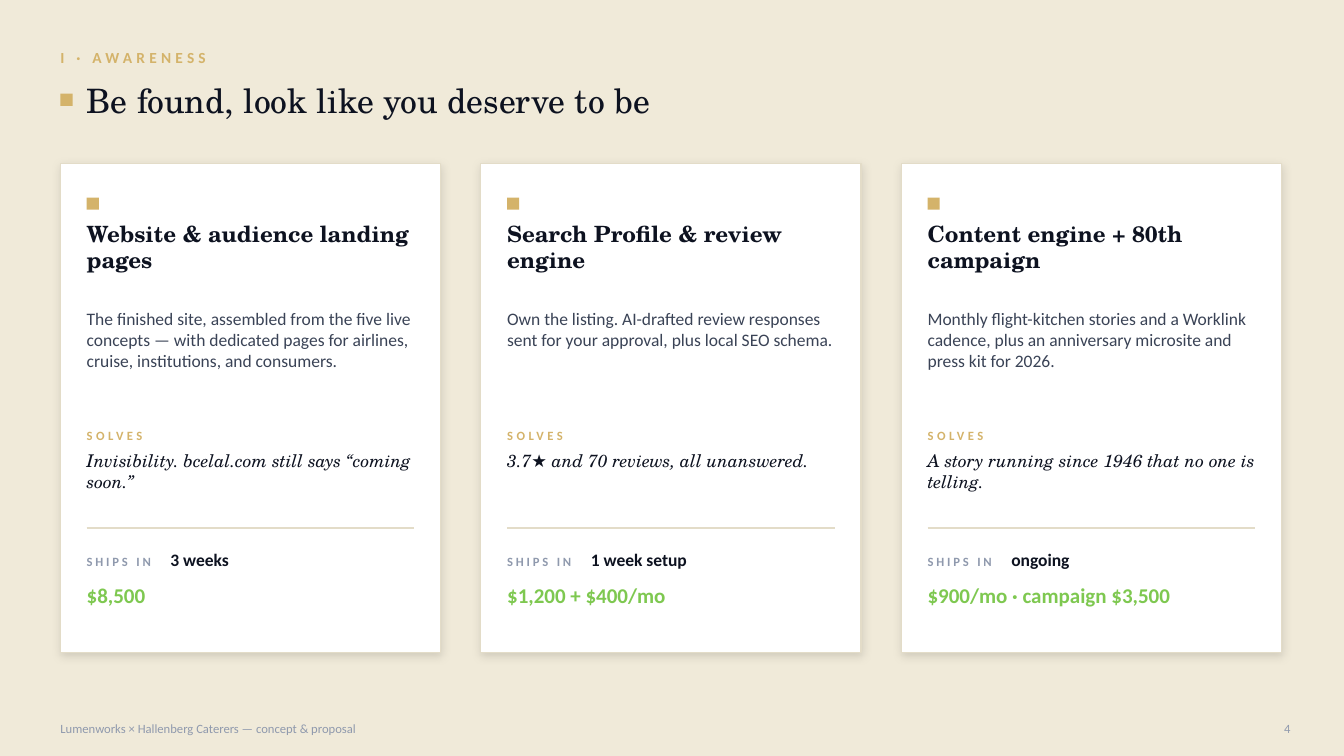
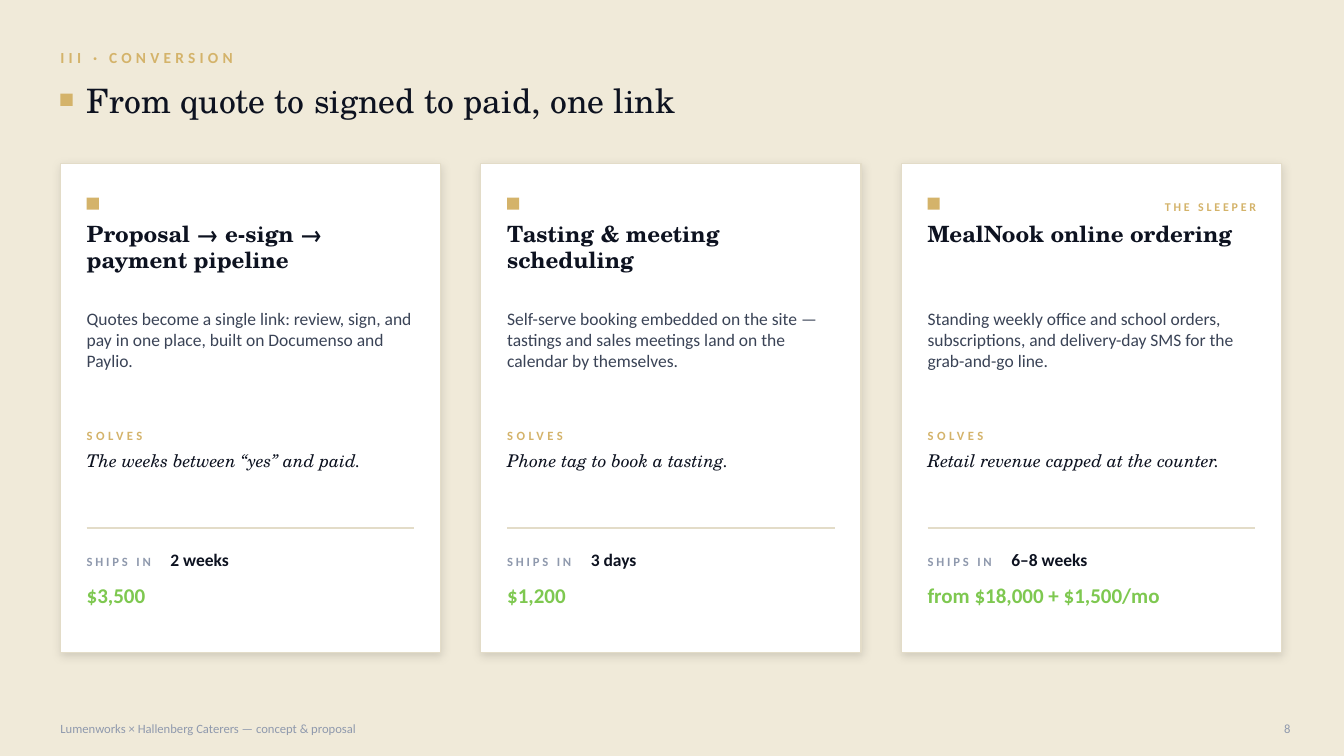
from dataclasses import dataclass

from lxml import etree
from pptx import Presentation
from pptx.dml.color import RGBColor
from pptx.enum.shapes import MSO_CONNECTOR, MSO_SHAPE
from pptx.enum.text import MSO_ANCHOR, PP_ALIGN
from pptx.oxml.ns import qn
from pptx.slide import Slide
from pptx.util import Inches, Pt

RECT = MSO_SHAPE.RECTANGLE
STRAIGHT = MSO_CONNECTOR.STRAIGHT
TOP, MIDDLE = MSO_ANCHOR.TOP, MSO_ANCHOR.MIDDLE
LEFT, RIGHT = PP_ALIGN.LEFT, PP_ALIGN.RIGHT

CREAM, WHITE, GOLD, SAND = "F0EAD9", "FFFFFF", "D4B36A", "E3DCC8"
INK, SLATE, MUTED, GREEN = "0D1220", "3A4356", "8F99AD", "7EC850"
SANS, SERIF = "Calibri", "TeX Gyre Schola"

MARGIN = 0.6
CARD_TOP, CARD_W, CARD_H, CARD_GAP = 1.62, 3.77, 4.85, 0.4
PAD = 0.26
INNER_W = CARD_W - 2 * PAD
MARKER = 0.12
FOOTER = "Lumenworks × Hallenberg Caterers — concept & proposal"


@dataclass(frozen=True)
class Offer:
    title: str
    body: str
    solves: str
    ships_in: str
    price: str
    tag: str = ""


@dataclass(frozen=True)
class Page:
    number: int
    kicker: str
    title: str
    offers: tuple[Offer, ...]


PAGES = (
    Page(4, "I · AWARENESS", "Be found, look like you deserve to be", (
        Offer("Website & audience landing pages",
              "The finished site, assembled from the five live concepts — with "
              "dedicated pages for airlines, cruise, institutions, and consumers.",
              "Invisibility. bcelal.com still says “coming soon.”",
              "3 weeks", "$8,500"),
        Offer("Search Profile & review engine",
              "Own the listing. AI-drafted review responses sent for your "
              "approval, plus local SEO schema.",
              "3.7★ and 70 reviews, all unanswered.",
              "1 week setup", "$1,200 + $400/mo"),
        Offer("Content engine + 80th campaign",
              "Monthly flight-kitchen stories and a Worklink cadence, plus an "
              "anniversary microsite and press kit for 2026.",
              "A story running since 1946 that no one is telling.",
              "ongoing", "$900/mo · campaign $3,500"),
    )),
    Page(8, "III · CONVERSION", "From quote to signed to paid, one link", (
        Offer("Proposal → e-sign → payment pipeline",
              "Quotes become a single link: review, sign, and pay in one place, "
              "built on Documenso and Paylio.",
              "The weeks between “yes” and paid.",
              "2 weeks", "$3,500"),
        Offer("Tasting & meeting scheduling",
              "Self-serve booking embedded on the site — tastings and sales "
              "meetings land on the calendar by themselves.",
              "Phone tag to book a tasting.",
              "3 days", "$1,200"),
        Offer("MealNook online ordering",
              "Standing weekly office and school orders, subscriptions, and "
              "delivery-day SMS for the grab-and-go line.",
              "Retail revenue capped at the counter.",
              "6–8 weeks", "from $18,000 + $1,500/mo", tag="THE SLEEPER"),
    )),
)


def rgb(color: str) -> RGBColor:
    return RGBColor.from_string(color)


def add_run(p, text: str, *, size: float, color: str, font: str = SANS,
            bold: bool = False, italic: bool = False, spacing: float = 0) -> None:
    r = p.add_run()
    r.text = text
    r.font.name, r.font.size = font, Pt(size)
    r.font.bold, r.font.italic = bold, italic
    r.font.color.rgb = rgb(color)
    if spacing:
        r._r.get_or_add_rPr().set("spc", str(round(spacing * 100)))


def add_text(s: Slide, x: float, y: float, w: float, h: float, text: str = "", *,
             anchor=TOP, align=LEFT, **style):
    """Add a text box without insets and return its paragraph."""
    tf = s.shapes.add_textbox(Inches(x), Inches(y), Inches(w), Inches(h)).text_frame
    tf.word_wrap = True
    tf.margin_left = tf.margin_top = tf.margin_right = tf.margin_bottom = 0
    tf.vertical_anchor = anchor
    p = tf.paragraphs[0]
    p.alignment = align
    if text:
        add_run(p, text, **style)
    return p


def add_rect(s: Slide, x: float, y: float, w: float, h: float, fill: str):
    sp = s.shapes.add_shape(RECT, Inches(x), Inches(y), Inches(w), Inches(h))
    sp.shadow.inherit = False
    sp.fill.solid()
    sp.fill.fore_color.rgb = rgb(fill)
    sp.line.fill.background()
    return sp


def add_marker(s: Slide, x: float, y: float) -> None:
    add_rect(s, x, y, MARKER, MARKER, GOLD)


def add_panel(s: Slide, x: float) -> None:
    """Draw the white card with its border and soft shadow."""
    sp = add_rect(s, x, CARD_TOP, CARD_W, CARD_H, WHITE)
    sp.line.color.rgb = rgb(SAND)
    sp.line.width = Pt(0.75)
    effects = sp._element.spPr.find(qn("a:effectLst"))
    shadow = etree.SubElement(effects, qn("a:outerShdw"), blurRad=str(Pt(7)),
                              dist=str(Pt(2)), dir="5400000", rotWithShape="0")
    color = etree.SubElement(shadow, qn("a:srgbClr"), val="000000")
    etree.SubElement(color, qn("a:alpha"), val="13000")


def add_rule(s: Slide, x: float, y: float, w: float) -> None:
    line = s.shapes.add_connector(STRAIGHT, Inches(x), Inches(y), Inches(x + w), Inches(y))
    line.line.color.rgb = rgb(SAND)
    line.line.width = Pt(1)
    etree.SubElement(line._element.spPr, qn("a:effectLst"))


def add_tab_stop(p, position: float) -> None:
    tabs = etree.SubElement(p._p.get_or_add_pPr(), qn("a:tabLst"))
    etree.SubElement(tabs, qn("a:tab"), pos=str(Inches(position)), algn="l")


def add_card(s: Slide, left: float, offer: Offer) -> None:
    add_panel(s, left)
    x = left + PAD
    add_marker(s, x, 1.96)
    add_text(s, x, 2.18, INNER_W, 0.78, offer.title,
             size=16, color=INK, font=SERIF, bold=True)
    add_text(s, x, 3.06, INNER_W, 1.06, offer.body, size=12.5, color=SLATE)
    add_text(s, x, 4.2, INNER_W, 0.24, "SOLVES", anchor=MIDDLE,
             size=9, color=GOLD, bold=True, spacing=2.5)
    add_text(s, x, 4.46, INNER_W, 0.62, offer.solves,
             size=12.5, color=INK, font=SERIF, italic=True)
    add_rule(s, x, 5.24, INNER_W)
    p = add_text(s, x, 5.4, INNER_W, 0.3, anchor=MIDDLE)
    add_tab_stop(p, 0.83)
    add_run(p, "SHIPS IN\t", size=9, color=MUTED, bold=True, spacing=2)
    add_run(p, offer.ships_in, size=12.5, color=INK, bold=True)
    add_text(s, x, 5.78, INNER_W, 0.52, offer.price, size=15, color=GREEN, bold=True)
    if offer.tag:
        add_text(s, x + 2.06, 1.92, 1.2, 0.26, offer.tag, anchor=MIDDLE, align=RIGHT,
                 size=8.5, color=GOLD, bold=True, spacing=2)


def add_header(s: Slide, page: Page) -> None:
    add_text(s, MARGIN, 0.42, 8, 0.3, page.kicker, anchor=MIDDLE,
             size=11, color=GOLD, bold=True, spacing=3)
    add_marker(s, MARGIN, 0.93)
    add_text(s, MARGIN + PAD, 0.72, 11.5, 0.55, page.title, anchor=MIDDLE,
             size=24, color=INK, font=SERIF)


def add_footer(s: Slide, number: int) -> None:
    add_text(s, MARGIN, 7.08, 6.5, 0.3, FOOTER, anchor=MIDDLE, size=9, color=MUTED)
    add_text(s, 12.4, 7.08, 0.4, 0.3, str(number), anchor=MIDDLE, align=RIGHT,
             size=9, color=MUTED)


def add_page(prs, page: Page) -> None:
    s = prs.slides.add_slide(prs.slide_layouts[6])
    s.background.fill.solid()
    s.background.fill.fore_color.rgb = rgb(CREAM)
    add_header(s, page)
    for i, offer in enumerate(page.offers):
        add_card(s, MARGIN + i * (CARD_W + CARD_GAP), offer)
    add_footer(s, page.number)


def main() -> None:
    prs = Presentation()
    prs.slide_width, prs.slide_height = Inches(13.33), Inches(7.5)
    for page in PAGES:
        add_page(prs, page)
    prs.save("out.pptx")


if __name__ == "__main__":
    main()
